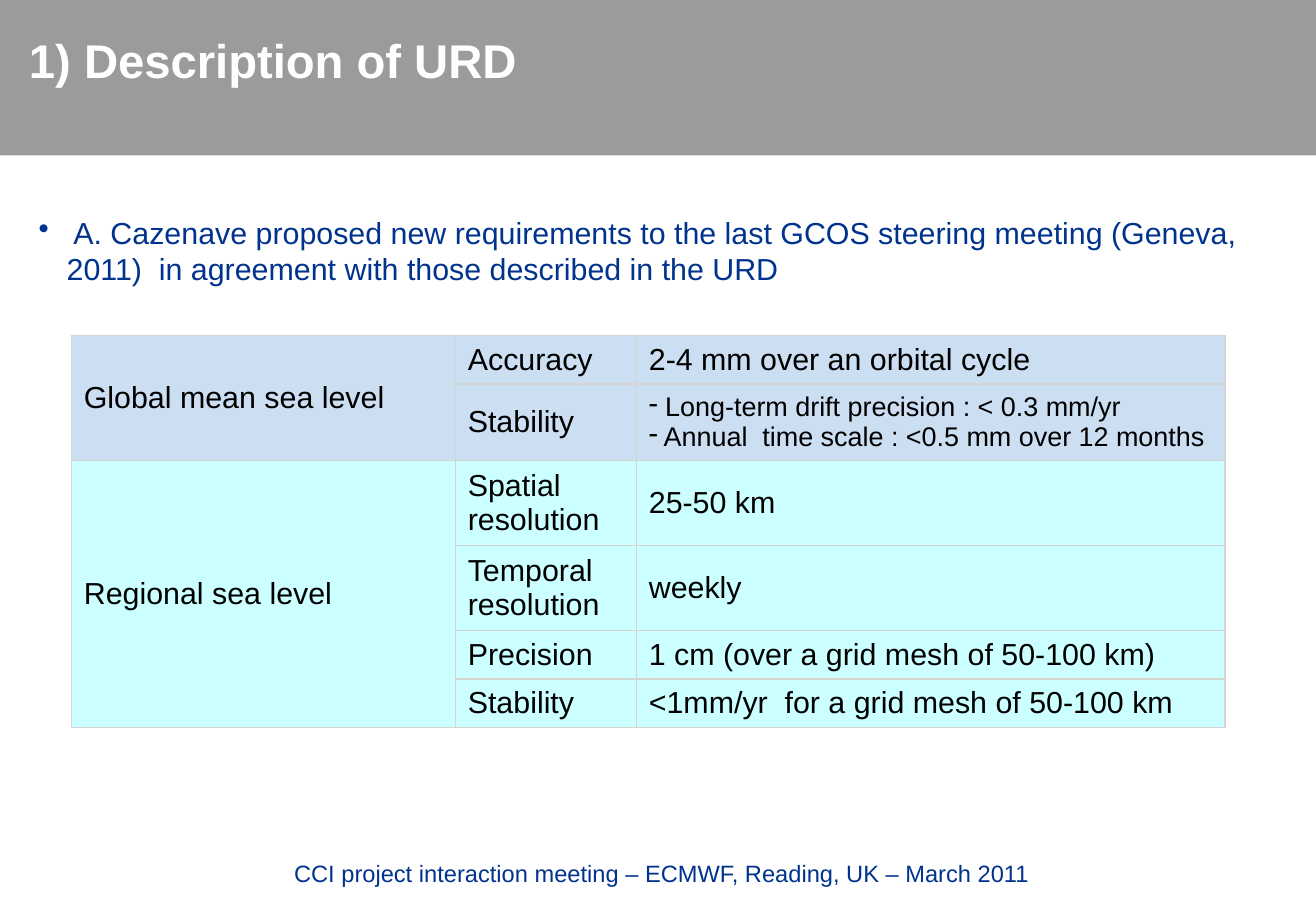
from dataclasses import dataclass

from lxml import etree
from pptx import Presentation
from pptx.dml.color import RGBColor
from pptx.enum.shapes import MSO_SHAPE
from pptx.enum.text import MSO_ANCHOR
from pptx.oxml.ns import qn
from pptx.util import Inches, Pt

RECTANGLE = MSO_SHAPE.RECTANGLE
MIDDLE = MSO_ANCHOR.MIDDLE
FONT = "Arial"
COLORS = {
    "banner": "9A9B9C",
    "white": "FFFFFF",
    "navy": "00338D",
    "black": "000000",
    "border": "D5D6D2",
    "global": "CCDFF2",
    "regional": "CCFFFF",
}
COLUMN_WIDTHS = (3.16, 1.49, 4.84)


@dataclass(frozen=True)
class TextItem:
    text: str
    box: tuple[float, float, float, float]
    size: int
    color: str
    bold: bool = False
    line_spacing: float = 1.0
    margin_left: float = 0.1
    margin_top: float = 0.05
    bullet: str = ""
    hanging: float = 0


@dataclass(frozen=True)
class Requirement:
    name: str
    values: tuple[str, ...]
    height: float
    size: int = 18
    bullet: str = ""


@dataclass(frozen=True)
class Group:
    name: str
    fill: str
    requirements: tuple[Requirement, ...]


TEXTS = (
    TextItem("1) Description of URD", (0.14, 0.28, 10.36, 0.77), 28, "white",
             bold=True, line_spacing=0.85),
    TextItem(" A. Cazenave proposed new requirements to the last GCOS steering meeting "
             "(Geneva, 2011)  in agreement with those described in the URD",
             (0.22, 1.71, 10.45, 0.71), 18, "navy", bullet="•", hanging=0.23),
    TextItem("CCI project interaction meeting – ECMWF, Reading, UK – March 2011",
             (2.18, 6.97, 6.84, 0.52), 14, "navy", margin_left=0.24, margin_top=0.1),
)
GROUPS = (
    Group("Global mean sea level", "global", (
        Requirement("Accuracy", ("2-4 mm over an orbital cycle",), 0.4),
        Requirement("Stability", (" Long-term drift precision : < 0.3 mm/yr",
                                  " Annual  time scale : <0.5 mm over 12 months"),
                    0.63, 16, "-"),
    )),
    Group("Regional sea level", "regional", (
        Requirement("Spatial resolution", ("25-50 km",), 0.7),
        Requirement("Temporal resolution", ("weekly",), 0.7),
        Requirement("Precision", ("1 cm (over a grid mesh of 50-100 km)",), 0.4),
        Requirement("Stability", ("<1mm/yr  for a grid mesh of 50-100 km",), 0.4),
    )),
)


def rgb(name: str) -> RGBColor:
    return RGBColor.from_string(COLORS[name])


def format_paragraph(paragraph, size: int, color: str, bold: bool = False,
                     bullet: str = "", hanging: float = 0) -> None:
    if bullet:
        properties = paragraph._p.get_or_add_pPr()
        properties.set("marL", str(Inches(hanging)))
        properties.set("indent", str(-Inches(hanging)))
        etree.SubElement(properties, qn("a:buChar"), char=bullet)
    paragraph.font.name = FONT
    paragraph.font.size = Pt(size)
    paragraph.font.bold = bold
    paragraph.font.color.rgb = rgb(color)


def add_text(slide, item: TextItem) -> None:
    frame = slide.shapes.add_textbox(*map(Inches, item.box)).text_frame
    frame.word_wrap = True
    frame.margin_left = Inches(item.margin_left)
    frame.margin_top = Inches(item.margin_top)
    paragraph = frame.paragraphs[0]
    paragraph.text = item.text
    paragraph.line_spacing = item.line_spacing
    format_paragraph(paragraph, item.size, item.color, item.bold, item.bullet, item.hanging)


def style_cell(cell, fill: str) -> None:
    properties = cell._tc.get_or_add_tcPr()
    for side in ("lnL", "lnR", "lnT", "lnB"):
        line = etree.SubElement(properties, qn(f"a:{side}"), w=str(Pt(1)))
        solid = etree.SubElement(line, qn("a:solidFill"))
        etree.SubElement(solid, qn("a:srgbClr"), val=COLORS["border"])
    cell.fill.solid()
    cell.fill.fore_color.rgb = rgb(fill)
    cell.vertical_anchor = MIDDLE


def write_cell(cell, lines: tuple[str, ...], size: int = 18, bullet: str = "") -> None:
    cell.text = "\n".join(lines)
    for paragraph in cell.text_frame.paragraphs:
        format_paragraph(paragraph, size, "black", bullet=bullet)


def add_requirements_table(slide) -> None:
    heights = [item.height for group in GROUPS for item in group.requirements]
    table = slide.shapes.add_table(
        len(heights), len(COLUMN_WIDTHS), Inches(0.59), Inches(2.76),
        Inches(sum(COLUMN_WIDTHS)), Inches(sum(heights))).table
    table.first_row = False
    table.horz_banding = False
    for column, width in zip(table.columns, COLUMN_WIDTHS):
        column.width = Inches(width)
    for row, height in zip(table.rows, heights):
        row.height = Inches(height)
    first = 0
    for group in GROUPS:
        last = first + len(group.requirements) - 1
        for index, item in enumerate(group.requirements, first):
            for column in range(len(COLUMN_WIDTHS)):
                style_cell(table.cell(index, column), group.fill)
            write_cell(table.cell(index, 1), (item.name,))
            write_cell(table.cell(index, 2), item.values, item.size, item.bullet)
        table.cell(first, 0).merge(table.cell(last, 0))
        write_cell(table.cell(first, 0), (group.name,))
        first = last + 1


def main() -> None:
    """Build the slide on the sea level user requirements."""
    presentation = Presentation()
    presentation.slide_width = Inches(10.83)
    presentation.slide_height = Inches(7.5)
    slide = presentation.slides.add_slide(presentation.slide_layouts[6])
    banner = slide.shapes.add_shape(RECTANGLE, 0, 0, presentation.slide_width, Inches(1.28))
    banner.shadow.inherit = False
    banner.fill.solid()
    banner.fill.fore_color.rgb = rgb("banner")
    banner.line.fill.background()
    add_requirements_table(slide)
    for item in TEXTS:
        add_text(slide, item)
    presentation.save("out.pptx")


if __name__ == "__main__":
    main()
